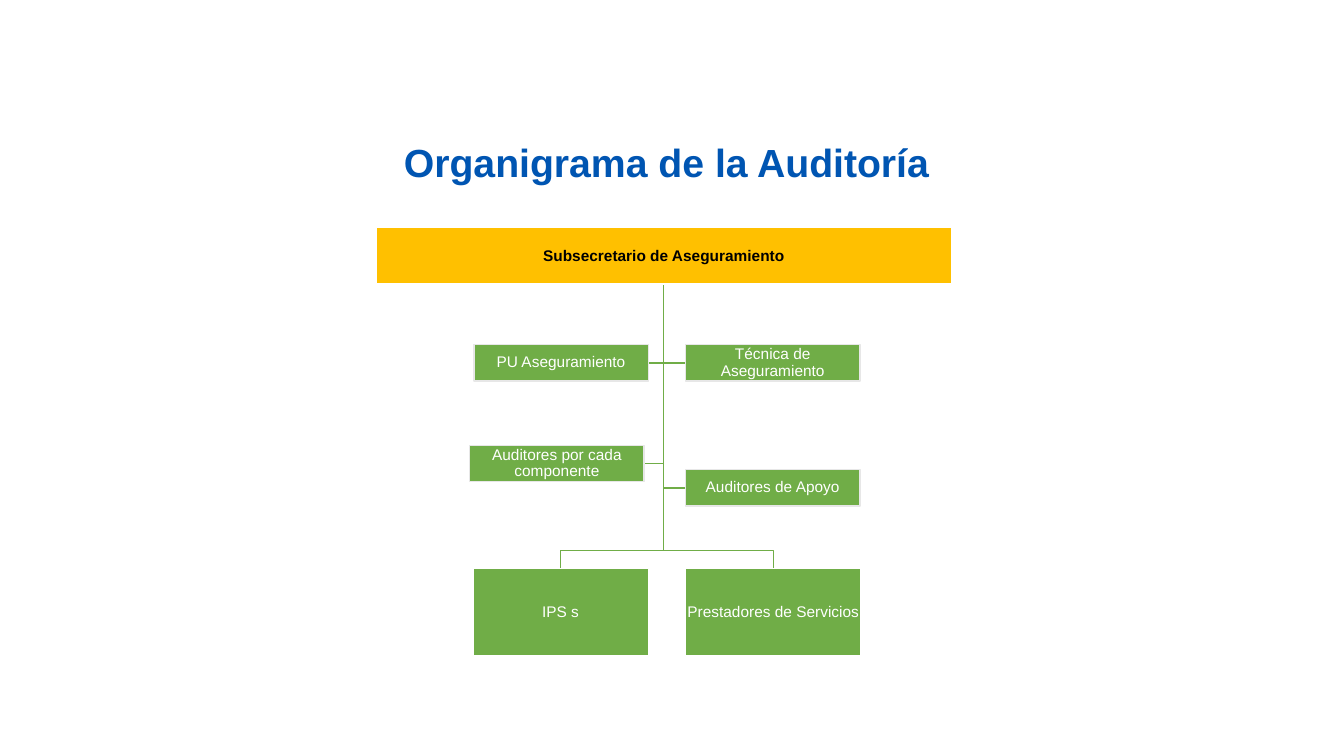
"""Builds the organisation chart slide of the audit."""
from dataclasses import dataclass

from pptx import Presentation
from pptx.dml.color import RGBColor as Rgb
from pptx.enum.text import MSO_ANCHOR as Anchor, MSO_AUTO_SIZE as AutoSize, PP_ALIGN as Align
from pptx.enum.shapes import MSO_SHAPE as Preset
from pptx.util import Pt

PX = 9144


@dataclass(frozen=True)
class Theme:
    font: str = "Arial"
    title_size: int = 28
    label_size: int = 11
    line_width: int = 1
    blue: str = "0055B2"
    gold: str = "FFC000"
    green: str = "70AD47"
    black: str = "000000"
    white: str = "FFFFFF"
    pale: str = "E7E7E7"


def assign(target, values):
    for name, value in values.items():
        setattr(target, name, value)


class ChartPage:
    def __init__(self, deck, theme):
        self.theme = theme
        self.page = deck.slides.add_slide(deck.slide_layouts[5])

    def label(self, shape, text, size, color, bold, spacing, frame_format):
        frame = shape.text_frame
        assign(frame, {"word_wrap": True, "auto_size": AutoSize.NONE, **frame_format})
        frame.text = text
        para = frame.paragraphs[0]
        assign(para, {"alignment": Align.CENTER, "line_spacing": spacing})
        assign(para.font, {"name": self.theme.font, "size": Pt(size), "bold": bold})
        para.font.color.rgb = Rgb.from_string(color)

    def outline(self, shape, color):
        shape.shadow.inherit = False
        shape.line.color.rgb = Rgb.from_string(color)
        shape.line.width = Pt(self.theme.line_width)

    def title(self, text, left, top, width, height):
        shape = self.page.shapes.title
        assign(shape, {"left": left * PX, "top": top * PX,
                       "width": width * PX, "height": height * PX})
        self.label(shape, text, self.theme.title_size, self.theme.blue, True, 1.0,
                   {"vertical_anchor": Anchor.TOP})

    def link(self, start, *points):
        builder = self.page.shapes.build_freeform(*start, scale=PX)
        builder.add_line_segments(points, close=False)
        shape = builder.convert_to_shape()
        shape.fill.background()
        self.outline(shape, self.theme.green)

    def box(self, text, bounds, fill, line, color, bold=False):
        shape = self.page.shapes.add_shape(Preset.RECTANGLE, *(n * PX for n in bounds))
        shape.fill.solid()
        shape.fill.fore_color.rgb = Rgb.from_string(fill)
        self.outline(shape, line)
        margins = {f"margin_{side}": PX for side in ("left", "top", "right", "bottom")}
        self.label(shape, text, self.theme.label_size, color, bold, 0.9,
                   {"vertical_anchor": Anchor.MIDDLE, **margins})


def main():
    deck = Presentation()
    assign(deck, {"slide_width": 1333 * PX, "slide_height": 750 * PX})
    theme = Theme()
    chart = ChartPage(deck, theme)
    chart.title("Organigrama de la Auditoría", 158, 132, 1006, 57)

    trunk, trunk_top, bus = 658, 281, 546
    side_width, side_height = 173, 36
    unit_top, unit_width, unit_height = 564, 174, 87
    assistants = [
        ("PU Aseguramiento", 470, 342),
        ("Técnica de Aseguramiento", 680, 342),
        ("Auditores por cada componente", 466, 442),
        ("Auditores de Apoyo", 680, 466),
    ]
    units = [("IPS s", 469), ("Prestadores de Servicios", 680)]

    for _, left, top in assistants:
        middle = top + side_height // 2
        edge = left if left > trunk else left + side_width
        chart.link((trunk, trunk_top), (trunk, middle), (edge, middle))
    for _, left in units:
        center = left + unit_width // 2
        chart.link((trunk, trunk_top), (trunk, bus), (center, bus), (center, unit_top))

    chart.box("Subsecretario de Aseguramiento", (373, 226, 571, 56),
              theme.gold, theme.white, theme.black, bold=True)
    for text, left in units:
        chart.box(text, (left, unit_top, unit_width, unit_height),
                  theme.green, theme.white, theme.white)
    for text, left, top in assistants:
        chart.box(text, (left, top, side_width, side_height),
                  theme.green, theme.pale, theme.white)

    deck.save("out.pptx")


if __name__ == "__main__":
    main()
